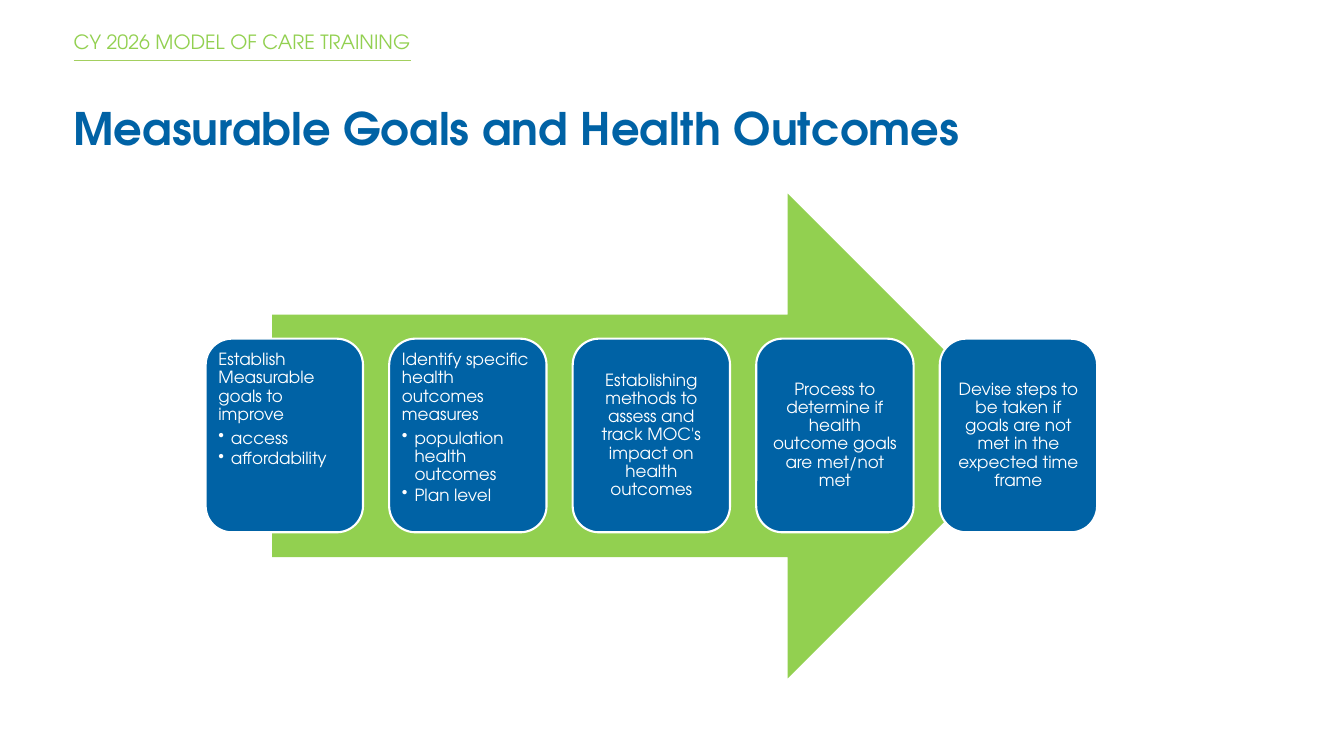
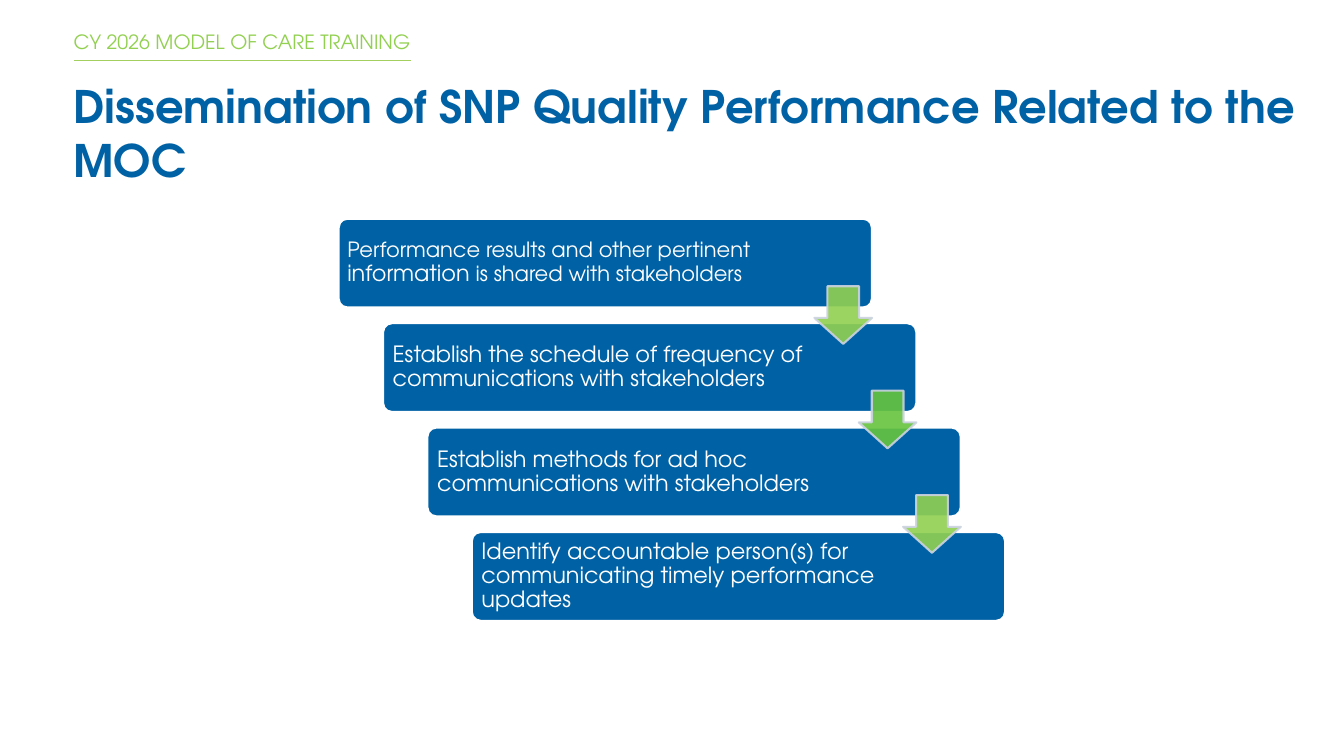
import dataclasses
import typing

import lxml.etree
import pptx
import pptx.dml.color
import pptx.enum.shapes
import pptx.enum.text
import pptx.oxml.ns
import pptx.util

Pt = pptx.util.Pt
qn = pptx.oxml.ns.qn
Shape = pptx.enum.shapes.MSO_SHAPE
Anchor = pptx.enum.text.MSO_ANCHOR
Align = pptx.enum.text.PP_ALIGN

FONT = "TeX Gyre Adventor"
BLUE = "0062A5"
GREEN = "92D050"
DEEP = "67C43E"
RULE = "A3CF5F"
EDGE = "CCD3E1"
WHITE = "FFFFFF"
LEFT = 52.56
TIGHT = 0.9


@dataclasses.dataclass(frozen=True)
class Box:
    left: float
    top: float
    width: float
    height: float

    def points(self) -> list[int]:
        return [Pt(size) for size in dataclasses.astuple(self)]


@dataclasses.dataclass(frozen=True)
class Style:
    size: float
    color: str
    bold: bool = False
    align: Align = Align.LEFT
    pitch: float = 1.0
    after: float = 0


@dataclasses.dataclass(frozen=True)
class Card:
    text: str
    points: tuple[str, ...] = ()


class Span(typing.NamedTuple):
    text: str
    size: float = 16


@dataclasses.dataclass(frozen=True)
class Step:
    spans: tuple[Span, ...]
    inset: float = 5.04
    right: float = 77
    arrow: str = ""


CARDS = (
    Card("Establish Measurable goals to improve", ("access", "affordability")),
    Card("Identify specific health outcomes measures",
         ("population health outcomes", "Plan level")),
    Card("Establishing methods to assess and track MOC's impact on health outcomes"),
    Card("Process to determine if health outcome goals are met/not met"),
    Card("Devise steps to be taken if goals are not met in the expected time frame"),
)

STEPS = (
    Step((Span("Performance results and other pertinent ", 15), Span("information"),
          Span(" is shared with stakeholders", 15)), 4.32, 73.7, GREEN),
    Step((Span("Establish the schedule of frequency of communications with stakeholders"),),
         arrow=DEEP),
    Step((Span("Establish methods for ad hoc communications with stakeholders"),),
         arrow=GREEN),
    Step((Span("Identify accountable person(s) for communicating timely performance updates"),)),
)


def paint(target, color: str) -> None:
    target.rgb = pptx.dml.color.RGBColor.from_string(color)


def set_frame(frame, anchor: Anchor, inset: float = 0, right: float | None = None) -> None:
    frame.word_wrap = True
    frame.vertical_anchor = anchor
    frame.margin_left = frame.margin_top = frame.margin_bottom = Pt(inset)
    frame.margin_right = Pt(inset if right is None else right)


def format_text(para, style: Style) -> None:
    para.alignment = style.align
    para.line_spacing = style.pitch
    para.space_after = Pt(style.after)
    for run in para.runs:
        run.font.name = FONT
        run.font.size = Pt(style.size)
        run.font.bold = style.bold
        paint(run.font.color, style.color)


def add_point(frame, text: str, style: Style) -> None:
    para = frame.add_paragraph()
    props = para._p.get_or_add_pPr()
    props.set("marL", str(Pt(9)))
    props.set("indent", str(Pt(-9)))
    lxml.etree.SubElement(props, qn("a:buChar")).set("char", "•")
    para.text = text
    format_text(para, style)


def add_label(slide, box: Box, text: str, style: Style, anchor: Anchor) -> None:
    frame = slide.shapes.add_textbox(*box.points()).text_frame
    set_frame(frame, anchor)
    frame.text = text
    format_text(frame.paragraphs[0], style)


def add_shape(slide, kind: Shape, box: Box, fill: str, line: str = ""):
    shape = slide.shapes.add_shape(kind, *box.points())
    shape.shadow.inherit = False
    shape.fill.solid()
    paint(shape.fill.fore_color, fill)
    if line:
        paint(shape.line.color, line)
        shape.line.width = Pt(1.5)
    else:
        shape.line.fill.background()
    return shape


def fade(shape, percent: int) -> None:
    for color in shape._element.spPr.iter(qn("a:srgbClr")):
        lxml.etree.SubElement(color, qn("a:alpha")).set("val", str(percent * 1000))


def add_page(deck, title: str, top: float):
    slide = deck.slides.add_slide(deck.slide_layouts[6])
    rule = slide.shapes.add_connector(
        pptx.enum.shapes.MSO_CONNECTOR.STRAIGHT, Pt(LEFT), Pt(43.2), Pt(293.4), Pt(43.2))
    paint(rule.line.color, RULE)
    rule.line.width = Pt(1)
    lxml.etree.SubElement(rule._element.spPr, qn("a:effectLst"))
    add_label(slide, Box(LEFT, 13, 241.2, 34), "CY 2026 MODEL OF CARE TRAINING",
              Style(14, GREEN), Anchor.MIDDLE)
    add_label(slide, Box(LEFT, top, 897.84, 100), title,
              Style(32, BLUE, bold=True, after=6), Anchor.TOP)
    return slide


def draw_goals(deck) -> None:
    slide = add_page(deck, "Measurable Goals and Health Outcomes", 72)
    add_shape(slide, Shape.RIGHT_ARROW, Box(194.4, 138.24, 541.44, 346.32), GREEN)
    for index, card in enumerate(CARDS):
        box = Box(146.88 + index * 131.1, 241.92, 112.4, 138.3)
        frame = add_shape(slide, Shape.ROUNDED_RECTANGLE, box, BLUE, WHITE).text_frame
        set_frame(frame, Anchor.TOP if card.points else Anchor.MIDDLE, 3.6)
        frame.text = card.text
        align = Align.LEFT if card.points else Align.CENTER
        format_text(frame.paragraphs[0], Style(12, WHITE, align=align, pitch=TIGHT, after=4.2))
        for point in card.points:
            add_point(frame, point, Style(12, WHITE, pitch=TIGHT, after=1.8))


def draw_steps(deck) -> None:
    slide = add_page(deck, "Dissemination of SNP Quality Performance Related to the MOC", 56.16)
    boxes = [Box(241.92 + index * 31.7, 156.24 + index * 74.6, 380.9, 63.4)
             for index in range(len(STEPS))]
    for step, box in zip(STEPS, boxes):
        shape = add_shape(slide, Shape.ROUNDED_RECTANGLE, box, BLUE, WHITE)
        shape.adjustments[0] = 0.1
        frame = shape.text_frame
        set_frame(frame, Anchor.MIDDLE, step.inset, step.right)
        para = frame.paragraphs[0]
        for span in step.spans:
            para.add_run().text = span.text
        format_text(para, Style(16, WHITE, pitch=TIGHT, after=5.5))
        for run, span in zip(para.runs, step.spans):
            run.font.size = Pt(span.size)
    for step, box in zip(STEPS, boxes):
        if step.arrow:
            place = Box(box.left + 339.8, box.top + 48.2, 41.2, 41.2)
            arrow = add_shape(slide, Shape.DOWN_ARROW, place, step.arrow, EDGE)
            arrow.adjustments[0] = 0.55
            arrow.adjustments[1] = 0.45
            fade(arrow, 90)


def main() -> None:
    deck = pptx.Presentation()
    deck.slide_width = Pt(960)
    deck.slide_height = Pt(540)
    draw_goals(deck)
    draw_steps(deck)
    deck.save("out.pptx")


if __name__ == "__main__":
    main()
